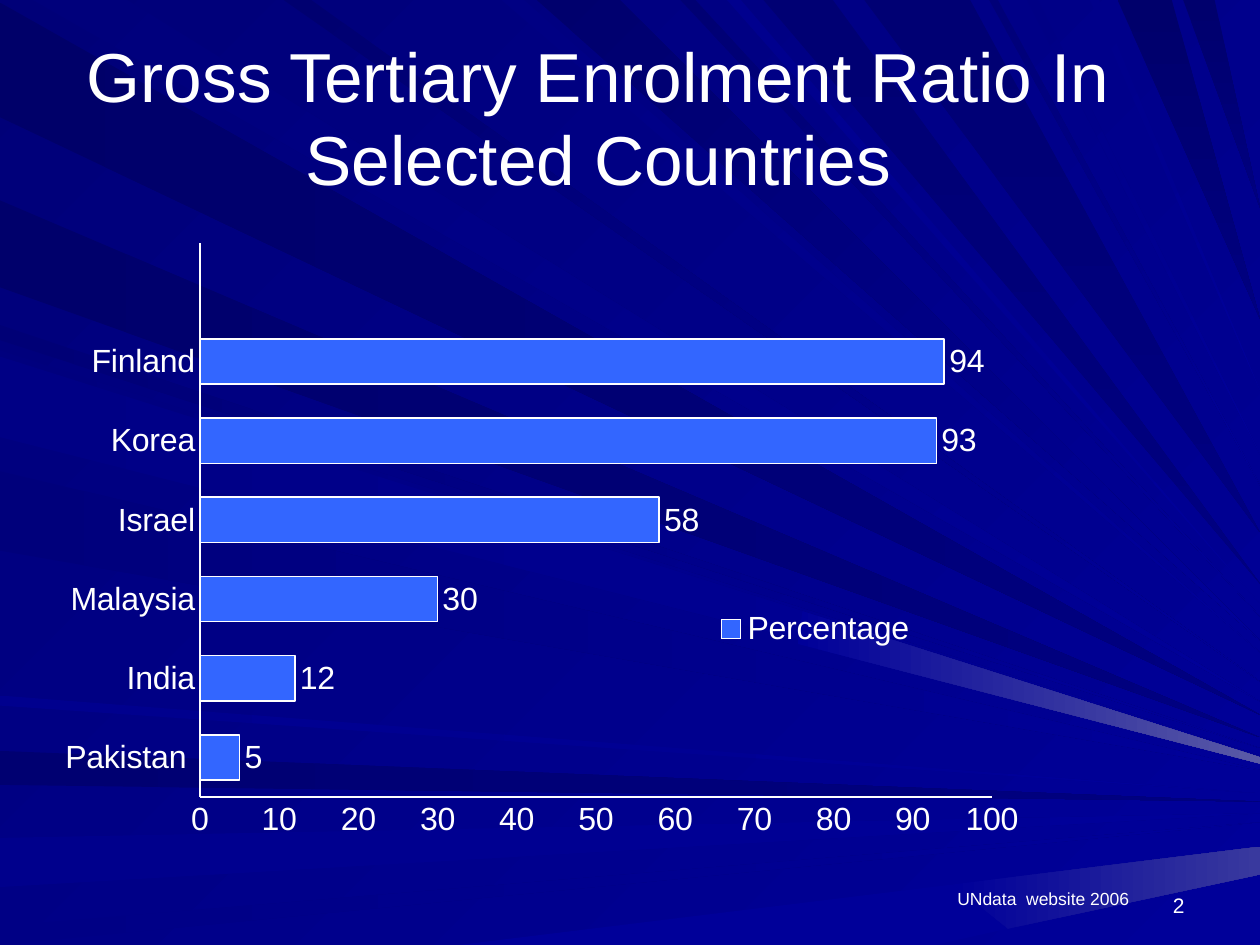
from lxml import etree
from pptx import Presentation
from pptx.chart.data import CategoryChartData
from pptx.dml.color import RGBColor
from pptx.enum.chart import XL_CHART_TYPE as ChartType
from pptx.enum.chart import XL_LABEL_POSITION as LabelPosition
from pptx.enum.chart import XL_LEGEND_POSITION as LegendPosition
from pptx.enum.chart import XL_TICK_MARK as TickMark
from pptx.enum.text import MSO_ANCHOR as Anchor
from pptx.enum.text import MSO_AUTO_SIZE as AutoSize
from pptx.enum.text import PP_ALIGN as Align
from pptx.oxml.ns import qn
from pptx.util import Inches, Pt

FONT = "Arial"
WHITE = "FFFFFF"
BLUE = "3366FF"
NAVY = "000080"
ROYAL = "000099"
GLOW = "5A5AA6"
SLIDE_WIDTH = 10
FOCUS_X, FOCUS_Y = 11.4, 6.4

LEFT_RAYS = [
    (0.02, 0.93, "000069", NAVY),
    (5.96, 6.23, "000071", NAVY),
    (6.65, 7.04, "00008C", ROYAL),
    (7.35, 7.5, "000085", ROYAL),
    (2.58, 2.7, "000076", ROYAL),
    (1.59, 2.28, "00006B", NAVY),
    (2.78, 3.42, "00007E", ROYAL),
    (3.74, 4.37, "00007B", ROYAL),
    (5.52, 5.6, "00008E", ROYAL),
    (2.83, 3.47, "000085", ROYAL),
]
TOP_RAYS = [
    (0.26, 1.01, "00007B", ROYAL),
    (2.25, 2.47, "000070", ROYAL),
    (3.98, 4.16, "000083", ROYAL),
    (4.26, 4.92, "00006D", ROYAL),
    (5.4, 5.52, "000073", ROYAL),
    (5.77, 5.88, "00008E", ROYAL),
    (6.06, 6.61, "000073", NAVY),
    (6.86, 7.7, "000073", NAVY),
    (7.85, 7.92, "000078", ROYAL),
    (8.15, 8.24, "000085", ROYAL),
    (8.65, 8.72, "00008A", ROYAL),
    (8.87, 9.3, "00006B", NAVY),
    (9.39, 9.64, "00006D", NAVY),
]
BRIGHT_RAYS = [
    ([(3.64, 7.5), (7.56, 7.02), (8, 7.37), (7.42, 7.5)], ROYAL, ROYAL),
    ([(7.56, 7.02), (10, 6.72), (10, 6.94), (8, 7.37)], ROYAL, "39399E"),
    ([(6.37, 4.85), (10, 6.01), (10, 6.06), (6.33, 5.11)], ROYAL, GLOW),
]

ENROLMENT = [("Pakistan ", 5), ("India", 12), ("Malaysia", 30), ("Israel", 58),
             ("Korea", 93), ("Finland", 94), ("", None)]


def rgb(value):
    return RGBColor.from_string(value)


def paint_gradient(fill, start, end, angle):
    fill.gradient()
    fill.gradient_angle = -angle % 360
    for stop, color in zip(fill.gradient_stops, (start, end)):
        stop.color.rgb = rgb(color)


def add_ray(group, points, start, end, angle):
    corners = [(Inches(x), Inches(y)) for x, y in points]
    builder = group.shapes.build_freeform(*corners[0])
    builder.add_line_segments(corners[1:], close=True)
    ray = builder.convert_to_shape()
    ray.shadow.inherit = False
    ray.line.fill.background()
    paint_gradient(ray.fill, start, end, angle)


def ray_tip(x, y):
    share = (SLIDE_WIDTH - x) / (FOCUS_X - x)
    return SLIDE_WIDTH, y + share * (FOCUS_Y - y)


def add_rays(page):
    group = page.shapes.add_group_shape()
    for near, far, start, end in LEFT_RAYS:
        tip = ray_tip(0, (near + far) / 2)
        add_ray(group, [(0, near), tip, (0, far)], start, end, 0)
    for near, far, start, end in TOP_RAYS:
        tip = ray_tip((near + far) / 2, 0)
        angle = 90 if end == NAVY else 45
        add_ray(group, [(near, 0), tip, (far, 0)], start, end, angle)
    for points, start, end in BRIGHT_RAYS:
        add_ray(group, points, start, end, 0)
    return group


def style_font(font, size):
    font.name = FONT
    font.size = Pt(size)
    font.color.rgb = rgb(WHITE)


def write(box, text, size, align, anchor):
    frame = box.text_frame
    frame.word_wrap = True
    frame.auto_size = AutoSize.NONE
    frame.vertical_anchor = anchor
    para = frame.paragraphs[0]
    para.alignment = align
    span = para.add_run()
    span.text = text
    style_font(span.font, size)


def add_title(page, text):
    title = page.shapes.title
    title.left, title.top = Inches(0), Inches(0.3)
    title.width, title.height = Inches(9.5), Inches(1.25)
    write(title, text, 39.6, Align.CENTER, Anchor.MIDDLE)
    return title


def add_text(page, area, text, size, align, anchor):
    box = page.shapes.add_textbox(*map(Inches, area))
    write(box, text, size, align, anchor)


def set_layout(parent, before, x, y, width, height, inner=False):
    for old in parent.findall(qn("c:layout")):
        parent.remove(old)
    layout = etree.Element(qn("c:layout"))
    manual = etree.SubElement(layout, qn("c:manualLayout"))
    settings = [("xMode", "edge"), ("yMode", "edge"), ("x", x), ("y", y),
                ("w", width), ("h", height)]
    if inner:
        settings.insert(0, ("layoutTarget", "inner"))
    for name, value in settings:
        etree.SubElement(manual, qn(f"c:{name}")).set("val", str(value))
    parent.find(qn(before)).addprevious(layout)


def style_axis(axis):
    axis.has_major_gridlines = False
    axis.major_tick_mark = axis.minor_tick_mark = TickMark.NONE
    axis.format.line.color.rgb = rgb(WHITE)
    axis.format.line.width = Pt(1.5)


def add_enrolment_chart(page):
    data = CategoryChartData()
    data.categories = [country for country, ratio in ENROLMENT]
    data.add_series("Percentage", [ratio for country, ratio in ENROLMENT])
    area = map(Inches, (0.33, 1.83, 9.67, 4.94))
    chart = page.shapes.add_chart(ChartType.BAR_CLUSTERED, *area, data).chart
    chart.has_title = False
    style_font(chart.font, 18.3)
    style_axis(chart.category_axis)
    style_axis(chart.value_axis)
    chart.value_axis.minimum_scale = 0
    chart.value_axis.maximum_scale = 100
    chart.value_axis.major_unit = 10

    plot = chart.plots[0]
    plot.gap_width = 75
    plot.vary_by_categories = False
    bars = plot.series[0]
    bars.format.fill.solid()
    bars.format.fill.fore_color.rgb = rgb(BLUE)
    bars.format.line.color.rgb = rgb(WHITE)
    bars.format.line.width = Pt(1)
    labels = bars.data_labels
    labels.show_value = True
    labels.position = LabelPosition.OUTSIDE_END
    style_font(labels.font, 18.3)

    chart.has_legend = True
    chart.legend.position = LegendPosition.RIGHT
    chart.legend.include_in_layout = False
    style_font(chart.legend.font, 18.3)
    body = chart.element.find(qn("c:chart"))
    set_layout(body.find(qn("c:plotArea")), "c:barChart", 0.13, 0.02, 0.65, 0.89, True)
    set_layout(body.find(qn("c:legend")), "c:overlay", 0.55, 0.6, 0.17, 0.08)


def main():
    deck = Presentation()
    deck.slide_width, deck.slide_height = Inches(SLIDE_WIDTH), Inches(7.5)
    page = deck.slides.add_slide(deck.slide_layouts[5])
    paint_gradient(page.background.fill, "000078", ROYAL, 45)
    rays = add_rays(page)
    title = add_title(page, "Gross Tertiary Enrolment Ratio In Selected Countries")
    rays.element.addnext(title.element)
    add_text(page, (7.17, 6.83, 2.33, 0.5), "2", 12, Align.RIGHT, Anchor.BOTTOM)
    add_enrolment_chart(page)
    add_text(page, (7.5, 7, 1.92, 0.27), "UNdata  website 2006", 10,
             Align.LEFT, Anchor.TOP)
    deck.save("out.pptx")


if __name__ == "__main__":
    main()
